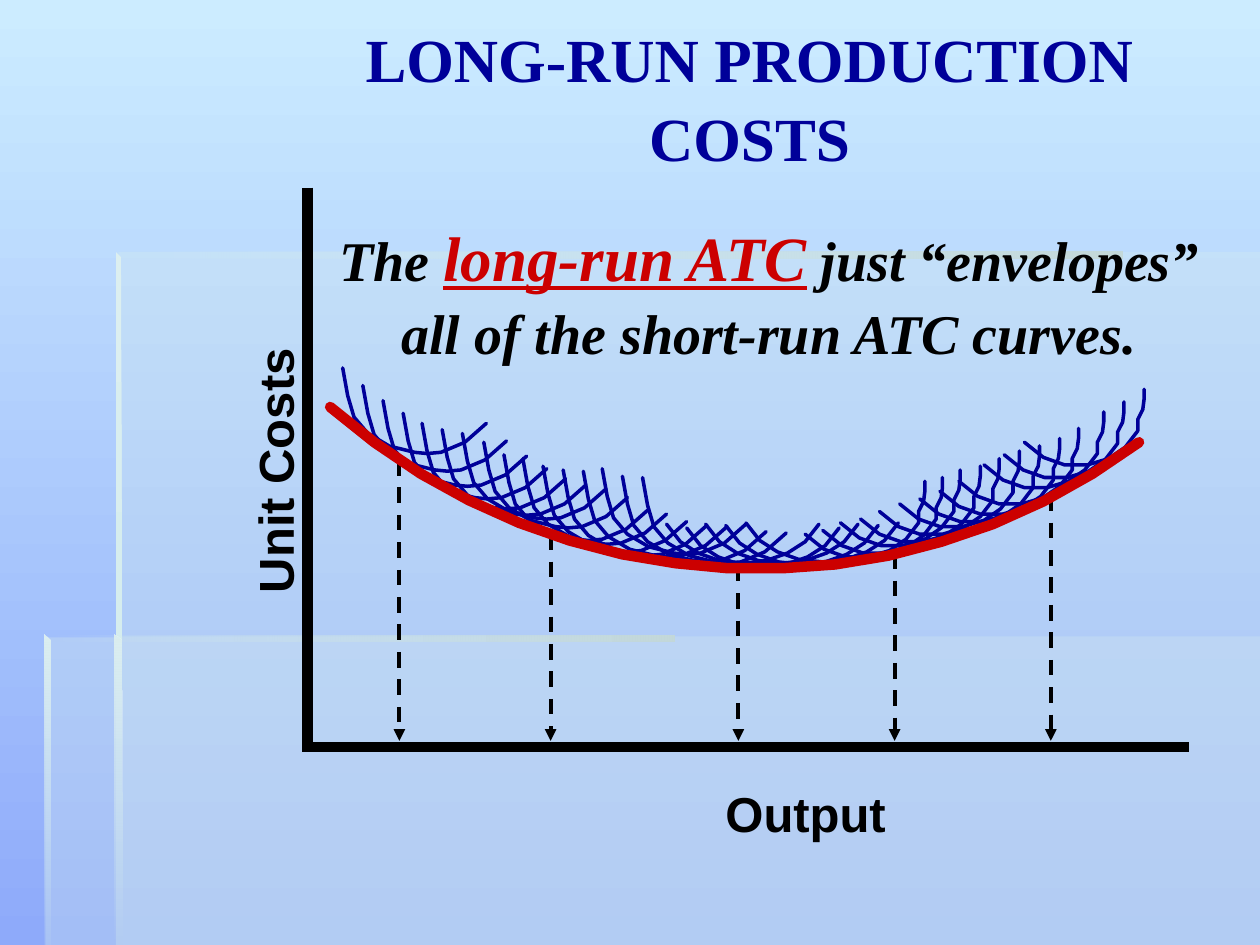
from lxml import etree
from pptx import Presentation
from pptx.dml.color import RGBColor
from pptx.enum.dml import MSO_LINE
from pptx.enum.shapes import MSO_CONNECTOR
from pptx.enum.text import PP_ALIGN
from pptx.oxml.ns import qn
from pptx.util import Inches, Pt

STRAIGHT, DASH = MSO_CONNECTOR.STRAIGHT, MSO_LINE.DASH
LEFT, CENTER = PP_ALIGN.LEFT, PP_ALIGN.CENTER
NAVY, RED, BLACK = "000099", "CC0000", "000000"
SERIF, SANS = "Times New Roman", "Arial"

# Background decoration: points, (colour, opacity) stops, gradient angle
PALE, LIGHT, GREY = "D6EDEE", "DCEFF0", "C4D9DA"
PANELS = [
    [(0.92, 5.05), (0.92, 7.5), (10, 7.5), (10, 5.05)],
    [(0.94, 5.06), (0.36, 5.06), (0.36, 7.5), (10, 7.5), (10, 2), (0.94, 2)],
]
EDGES = [
    ([(0.92, 2), (0.92, 2.05), (8.91, 2.05), (8.91, 2)], [(PALE, 0), (GREY, 100)], 0),
    ([(0.92, 2), (0.92, 5.1), (0.97, 5.1), (0.96, 2.04)], [(LIGHT, 100), (PALE, 100)], 270),
    ([(0.91, 7.5), (0.97, 7.5), (0.96, 5.08), (0.91, 5.04)], [(LIGHT, 100), (PALE, 0)], 270),
    ([(0.35, 5.04), (0.35, 5.09), (5.35, 5.09), (5.35, 5.04)], [(PALE, 0), (GREY, 100)], 0),
    ([(0.35, 5.04), (0.35, 7.5), (0.4, 7.5), (0.4, 5.09)], [(LIGHT, 100), (PALE, 10)], 270),
]

# Texts: box, rotation, alignment, wrap, line spacing, paragraphs of
# (text, size, font, colour, italic, underline)
TEXTS = [
    ((1.95, 0.08, 8, 0.68), 0, CENTER, True, 1.07,
     [[("LONG-RUN PRODUCTION COSTS", 35, SERIF, NAVY, False, False)]]),
    ((2.57, 1.64, 7.07, 1.23), 0, CENTER, False, 1.07,
     [[("The ", 32, SERIF, BLACK, True, False),
       ("long-run ATC", 36, SERIF, RED, True, True),
       (" just “envelopes”", 32, SERIF, BLACK, True, False)],
      [("all of the short-run ATC curves.", 32, SERIF, BLACK, True, False)]]),
    ((1.1, 3.45, 2.15, 0.56), 270, LEFT, False, 1.0,
     [[("Unit Costs", 28, SANS, BLACK, False, False)]]),
    ((5.66, 6.17, 1.47, 0.56), 0, LEFT, False, 1.0,
     [[("Output", 28, SANS, BLACK, False, False)]]),
]

# Short-run curves: one outline per family, and the corners where it repeats
FALLING = [(0, 0), (0.04, 0.22), (0.09, 0.39), (0.2, 0.52), (0.37, 0.62),
           (0.57, 0.67), (0.67, 0.68), (0.78, 0.67), (0.97, 0.59), (1.14, 0.44)]
BOTTOM = [(0, 0), (0.11, 0.14), (0.25, 0.23), (0.42, 0.29), (0.61, 0.31),
          (0.79, 0.29), (0.96, 0.23), (1.1, 0.14), (1.21, 0)]
RISING = [(0, 0.42), (0.15, 0.54), (0.32, 0.6), (0.41, 0.6), (0.5, 0.6),
          (0.67, 0.55), (0.8, 0.46), (0.9, 0.33), (0.9, 0.24), (0.94, 0.16),
          (0.95, 0.08), (0.95, 0)]
SHORT_RUN = [
    (FALLING, [(2.72, 2.92), (2.88, 3.06), (3.04, 3.18), (3.2, 3.28), (3.35, 3.36),
               (3.51, 3.41), (3.67, 3.44), (3.84, 3.51), (4, 3.61), (4.15, 3.64),
               (4.31, 3.7), (4.47, 3.73), (4.63, 3.74), (4.78, 3.72), (4.94, 3.78),
               (5.1, 3.79)]),
    (BOTTOM, [(5.29, 4.16), (5.45, 4.19), (5.6, 4.16), (5.76, 4.17), (5.92, 4.15)]),
    (RISING, [(6.39, 3.82), (6.53, 3.79), (6.67, 3.73), (6.83, 3.7), (6.98, 3.64),
              (7.14, 3.58), (7.3, 3.54), (7.46, 3.48), (7.61, 3.4), (7.81, 3.27),
              (7.97, 3.19), (8.13, 3.09)]),
]
LONG_RUN = [(2.62, 3.23), (2.97, 3.51), (3.34, 3.76), (3.72, 3.97), (4.12, 4.15),
            (4.52, 4.29), (4.94, 4.4), (5.36, 4.47), (5.78, 4.51), (6.21, 4.51),
            (6.63, 4.48), (7.05, 4.41), (7.47, 4.3), (7.88, 4.16), (8.28, 3.98),
            (8.67, 3.76), (9.04, 3.51)]
AXES = [(2.44, 1.49, 2.44, 5.97), (2.44, 5.93, 9.44, 5.93)]
DROPS = [(3.17, 3.65), (4.37, 4.24), (5.86, 4.49), (7.1, 4.39), (8.34, 3.93)]
DROP_END = 5.88


def rgb(color):
    return RGBColor.from_string(color)


def set_opacity(sp, values):
    for clr, value in zip(sp._element.spPr.iter(qn("a:srgbClr")), values):
        if value < 100:
            etree.SubElement(clr, qn("a:alpha")).set("val", str(value * 1000))


def set_gradient(fill, colors, angle):
    fill.gradient()
    fill.gradient_angle = angle
    for stop, color in zip(fill.gradient_stops, colors):
        stop.color.rgb = rgb(color)


def add_outline(s, points, close):
    pts = [(Inches(x), Inches(y)) for x, y in points]
    builder = s.shapes.build_freeform(*pts[0])
    builder.add_line_segments(pts[1:], close=close)
    sp = builder.convert_to_shape()
    sp.shadow.inherit = False
    return sp


def add_curve(s, points, color, width):
    sp = add_outline(s, points, False)
    sp.fill.background()
    sp.line.color.rgb = rgb(color)
    sp.line.width = Pt(width)
    sp.line._get_or_add_ln().set("cap", "rnd")


def add_line(s, x1, y1, x2, y2, width):
    line = s.shapes.add_connector(STRAIGHT, *map(Inches, (x1, y1, x2, y2)))
    line.line.color.rgb = rgb(BLACK)
    line.line.width = Pt(width)
    etree.SubElement(line._element.spPr, qn("a:effectLst"))
    return line


def add_text(s, box, rotation, align, wrap, spacing, paragraphs):
    sp = s.shapes.add_textbox(*map(Inches, box))
    sp.rotation = rotation
    tf = sp.text_frame
    tf.word_wrap = wrap
    for i, runs in enumerate(paragraphs):
        p = tf.add_paragraph() if i else tf.paragraphs[0]
        p.alignment = align
        p.line_spacing = spacing
        for text, size, font, color, italic, underline in runs:
            r = p.add_run()
            r.text = text
            r.font.size, r.font.name = Pt(size), font
            r.font.bold, r.font.italic, r.font.underline = True, italic, underline
            r.font.color.rgb = rgb(color)


prs = Presentation()
prs.slide_width, prs.slide_height = Inches(10), Inches(7.5)
s = prs.slides.add_slide(prs.slide_layouts[6])

# Background
set_gradient(s.background.fill, ["CCECFF", "8EAAFA"], 270)
for points in PANELS:
    sp = add_outline(s, points, True)
    sp.fill.solid()
    sp.fill.fore_color.rgb = rgb(PALE)
    sp.line.fill.background()
    set_opacity(sp, [30])
for points, stops, angle in EDGES:
    sp = add_outline(s, points, True)
    set_gradient(sp.fill, [color for color, _ in stops], angle)
    sp.line.fill.background()
    set_opacity(sp, [value for _, value in stops])

# Title, message and axis labels
for text in TEXTS:
    add_text(s, *text)

# Short-run curves
for outline, corners in SHORT_RUN:
    for left, top in corners:
        add_curve(s, [(left + x, top + y) for x, y in outline], NAVY, 2)

# Axes and dashed drop arrows
for axis in AXES:
    add_line(s, *axis, 6)
for x, top in DROPS:
    line = add_line(s, x, top, x, DROP_END, 2.25)
    line.line.dash_style = DASH
    etree.SubElement(line.line._get_or_add_ln(), qn("a:tailEnd")).set("type", "triangle")

# Long-run envelope
add_curve(s, LONG_RUN, RED, 6)

prs.save("out.pptx")
